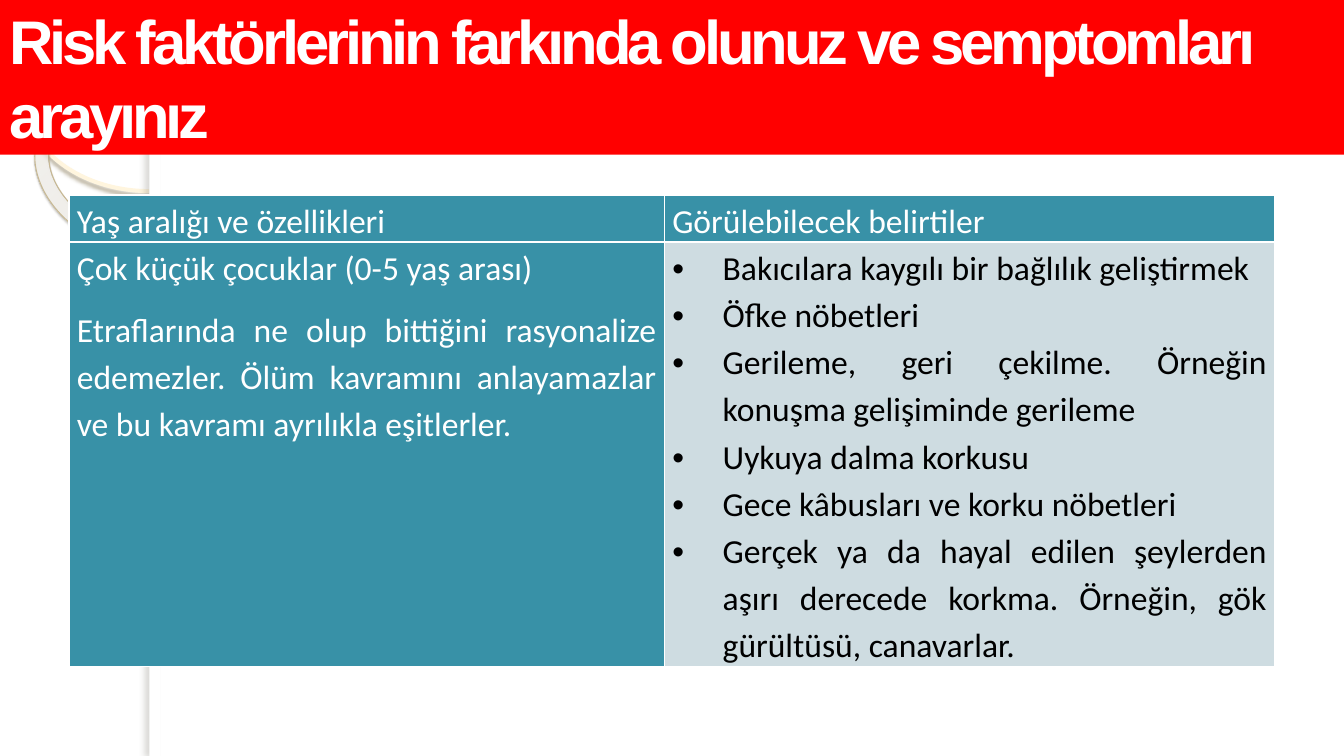
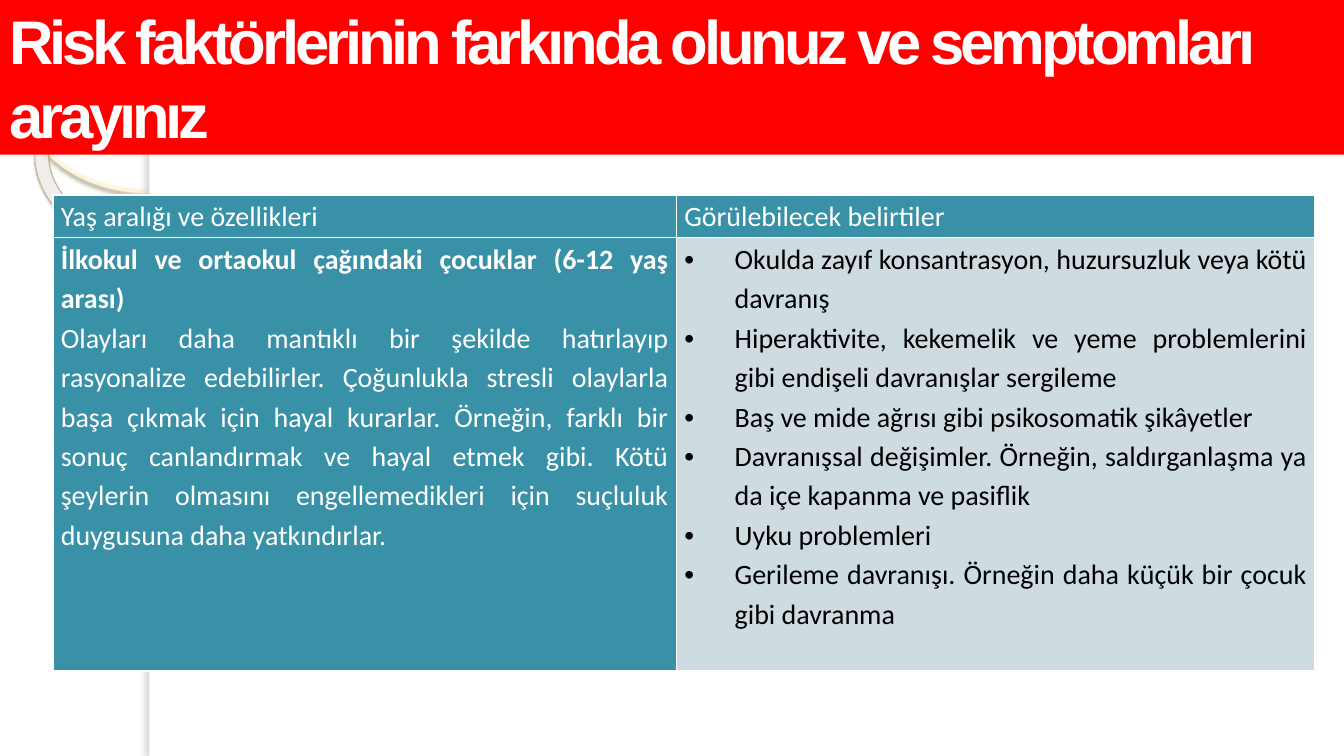
from lxml.etree import SubElement
from pptx import Presentation
from pptx.dml.color import RGBColor
from pptx.enum.shapes import MSO_SHAPE
from pptx.enum.text import MSO_ANCHOR, PP_ALIGN
from pptx.oxml import parse_xml
from pptx.oxml.ns import nsdecls, qn
from pptx.util import Pt

WIDTH, HEIGHT = 720, 405
WHITE, BLACK, RED = "FFFFFF", "000000", "FF0000"
TEAL, PALE = "3891A7", "CEDCE1"
BAND_HEIGHT = 82.8
SIDEBAR_WIDTH = 80
TABLE_TOP = 104.5
BULLET_INDENT = 27

TITLE = "Risk faktörlerinin farkında olunuz ve semptomları arayınız"
HEADINGS = ["Yaş aralığı ve özellikleri", "Görülebilecek belirtiler"]

AGE_GROUPS = [
    {
        "left": 37, "columns": [319, 327], "rows": [24.8, 223.3],
        "size": 18, "age_bold": False, "age_gap": 8,
        "age": "Çok küçük çocuklar (0-5 yaş arası)",
        "traits": "Etraflarında ne olup bittiğini rasyonalize edemezler. "
                  "Ölüm kavramını anlayamazlar ve bu kavramı ayrılıkla eşitlerler.",
        "symptoms": [
            "Bakıcılara kaygılı bir bağlılık geliştirmek",
            "Öfke nöbetleri",
            "Gerileme, geri çekilme. Örneğin konuşma gelişiminde gerileme",
            "Uykuya dalma korkusu",
            "Gece kâbusları ve korku nöbetleri",
            "Gerçek ya da hayal edilen şeylerden aşırı derecede korkma. "
            "Örneğin, gök gürültüsü, canavarlar.",
        ],
    },
    {
        "left": 28.4, "columns": [334, 342], "rows": [22.8, 232.2],
        "size": 15, "age_bold": True, "age_gap": 0,
        "age": "İlkokul ve ortaokul çağındaki çocuklar (6-12 yaş arası)",
        "traits": "Olayları daha mantıklı bir şekilde hatırlayıp rasyonalize "
                  "edebilirler. Çoğunlukla stresli olaylarla başa çıkmak için hayal "
                  "kurarlar. Örneğin, farklı bir sonuç canlandırmak ve hayal etmek "
                  "gibi. Kötü şeylerin olmasını engellemedikleri için suçluluk "
                  "duygusuna daha yatkındırlar.",
        "symptoms": [
            "Okulda zayıf konsantrasyon, huzursuzluk veya kötü davranış",
            "Hiperaktivite, kekemelik ve yeme problemlerini gibi endişeli "
            "davranışlar sergileme",
            "Baş ve mide ağrısı gibi psikosomatik şikâyetler",
            "Davranışsal değişimler. Örneğin, saldırganlaşma ya da içe kapanma "
            "ve pasiflik",
            "Uyku problemleri",
            "Gerileme davranışı. Örneğin daha küçük bir çocuk gibi davranma",
        ],
    },
]


def color(hex_value):
    return RGBColor.from_string(hex_value)


def add_figure(page, kind, box, fill=None, line=None):
    """Add a preset shape; line is a (colour, width) pair."""
    figure = page.shapes.add_shape(kind, *(Pt(length) for length in box))
    figure.shadow.inherit = False
    if fill:
        figure.fill.solid()
        figure.fill.fore_color.rgb = color(fill)
    else:
        figure.fill.background()
    if line:
        figure.line.color.rgb = color(line[0])
        figure.line.width = Pt(line[1])
    else:
        figure.line.fill.background()
    return figure


def add_color(parent, hex_value, opacity):
    """Append a colour with its opacity in percent."""
    node = SubElement(parent, qn("a:srgbClr"), val=hex_value)
    SubElement(node, qn("a:alpha"), val=str(opacity * 1000))


def cast_shadow(figure, hex_value, opacity, blur, distance, angle):
    effects = figure._element.spPr.find(qn("a:effectLst"))
    shadow = SubElement(effects, qn("a:outerShdw"), blurRad=str(Pt(blur)),
                        dist=str(Pt(distance)), dir=str(angle * 60000),
                        algn="tl", rotWithShape="0")
    add_color(shadow, hex_value, opacity)


def fill_radial(figure, stops, edges):
    """Replace an empty fill by a circular gradient."""
    gradient = parse_xml(f'<a:gradFill {nsdecls("a")} rotWithShape="1"/>')
    stop_list = SubElement(gradient, qn("a:gsLst"))
    for position, hex_value, opacity in stops:
        stop = SubElement(stop_list, qn("a:gs"), pos=str(position * 1000))
        add_color(stop, hex_value, opacity)
    circle = SubElement(gradient, qn("a:path"), path="circle")
    SubElement(circle, qn("a:fillToRect"),
               {side: str(edge * 1000) for side, edge in zip("ltrb", edges)})
    properties = figure._element.spPr
    properties.replace(properties.find(qn("a:noFill")), gradient)


def draw_backdrop(page):
    """Draw the rings of the sidebar and the white panel beside it."""
    ellipse = add_figure(page, MSO_SHAPE.OVAL, (13, 1.4, 134, 101),
                         line=("FFF5DE", 2.15))
    cast_shadow(ellipse, "B0A68F", 85, 2, 2, 90)

    ring = add_figure(page, MSO_SHAPE.DONUT, (14.4, 62.6, 88.6, 64.8),
                      line=("C7B893", 0.58))
    ring.rotation = 38.6
    ring.adjustments[0] = 0.118
    fill_radial(ring, [(0, "FFFCF6", 70), (70, "FFFEFB", 55), (100, "F0D28E", 60)],
                (-408, -50, 508, 150))
    cast_shadow(ring, "5A5444", 35, 1, 1.2, 75)

    add_figure(page, MSO_SHAPE.RECTANGLE,
               (SIDEBAR_WIDTH, 0, WIDTH - SIDEBAR_WIDTH, HEIGHT), WHITE)
    edge = add_figure(page, MSO_SHAPE.RECTANGLE, (SIDEBAR_WIDTH, 0, 5.8, HEIGHT), WHITE)
    cast_shadow(edge, "736F63", 25, 3, 3, 180)


def draw_title(page, box):
    band = add_figure(page, MSO_SHAPE.RECTANGLE, box, RED)
    frame = band.text_frame
    frame.word_wrap = True
    frame.vertical_anchor = MSO_ANCHOR.MIDDLE
    frame.margin_left = frame.margin_right = Pt(5)
    frame.margin_top = frame.margin_bottom = Pt(2.8)
    frame.text = TITLE
    para = frame.paragraphs[0]
    para.alignment = PP_ALIGN.LEFT
    para.space_before = Pt(6)
    span = para.runs[0]
    span.font.name, span.font.size, span.font.bold = "Arial", Pt(33), True
    span.font.color.rgb = color(WHITE)
    span._r.get_or_add_rPr().set("spc", "-220")


def add_bullet(para):
    properties = para._p.get_or_add_pPr()
    properties.set("marL", str(Pt(BULLET_INDENT)))
    properties.set("indent", str(-Pt(BULLET_INDENT)))
    SubElement(properties, qn("a:buFont"), typeface="Arial")
    SubElement(properties, qn("a:buChar"), char="•")


def add_borders(cell):
    properties = cell._tc.get_or_add_tcPr()
    for side in "LRTB":
        border = SubElement(properties, qn(f"a:ln{side}"), w=str(Pt(1)))
        fill = SubElement(border, qn("a:solidFill"))
        SubElement(fill, qn("a:srgbClr"), val=WHITE)


def fill_cell(cell, lines, size, fill=TEAL, ink=WHITE, bulleted=False):
    add_borders(cell)
    cell.fill.solid()
    cell.fill.fore_color.rgb = color(fill)
    cell.margin_left = cell.margin_right = Pt(4.2)
    cell.margin_top = cell.margin_bottom = 0
    cell.text_frame.text = "\n".join(lines)
    for para in cell.text_frame.paragraphs:
        para.alignment = PP_ALIGN.JUSTIFY
        para.line_spacing = 1.15
        if bulleted:
            add_bullet(para)
        font = para.runs[0].font
        font.name, font.size, font.bold = "Calibri", Pt(size), False
        font.color.rgb = color(ink)


def draw_symptom_table(page, group):
    columns, rows, size = group["columns"], group["rows"], group["size"]
    table = page.shapes.add_table(2, 2, Pt(group["left"]), Pt(TABLE_TOP),
                                  Pt(sum(columns)), Pt(sum(rows))).table
    for column, width in zip(table.columns, columns):
        column.width = Pt(width)
    for row, height in zip(table.rows, rows):
        row.height = Pt(height)
    for index, heading in enumerate(HEADINGS):
        fill_cell(table.cell(0, index), [heading], size)

    profile = table.cell(1, 0)
    fill_cell(profile, [group["age"], group["traits"]], size)
    age = profile.text_frame.paragraphs[0]
    age.space_after = Pt(group["age_gap"])
    age.runs[0].font.bold = group["age_bold"]
    fill_cell(table.cell(1, 1), group["symptoms"], size, PALE, BLACK, bulleted=True)


def main():
    deck = Presentation()
    deck.slide_width, deck.slide_height = Pt(WIDTH), Pt(HEIGHT)
    for group in AGE_GROUPS:
        page = deck.slides.add_slide(deck.slide_layouts[6])
        draw_backdrop(page)
        draw_title(page, (0, 0, WIDTH, BAND_HEIGHT))
        draw_symptom_table(page, group)
    deck.save("out.pptx")


if __name__ == "__main__":
    main()
